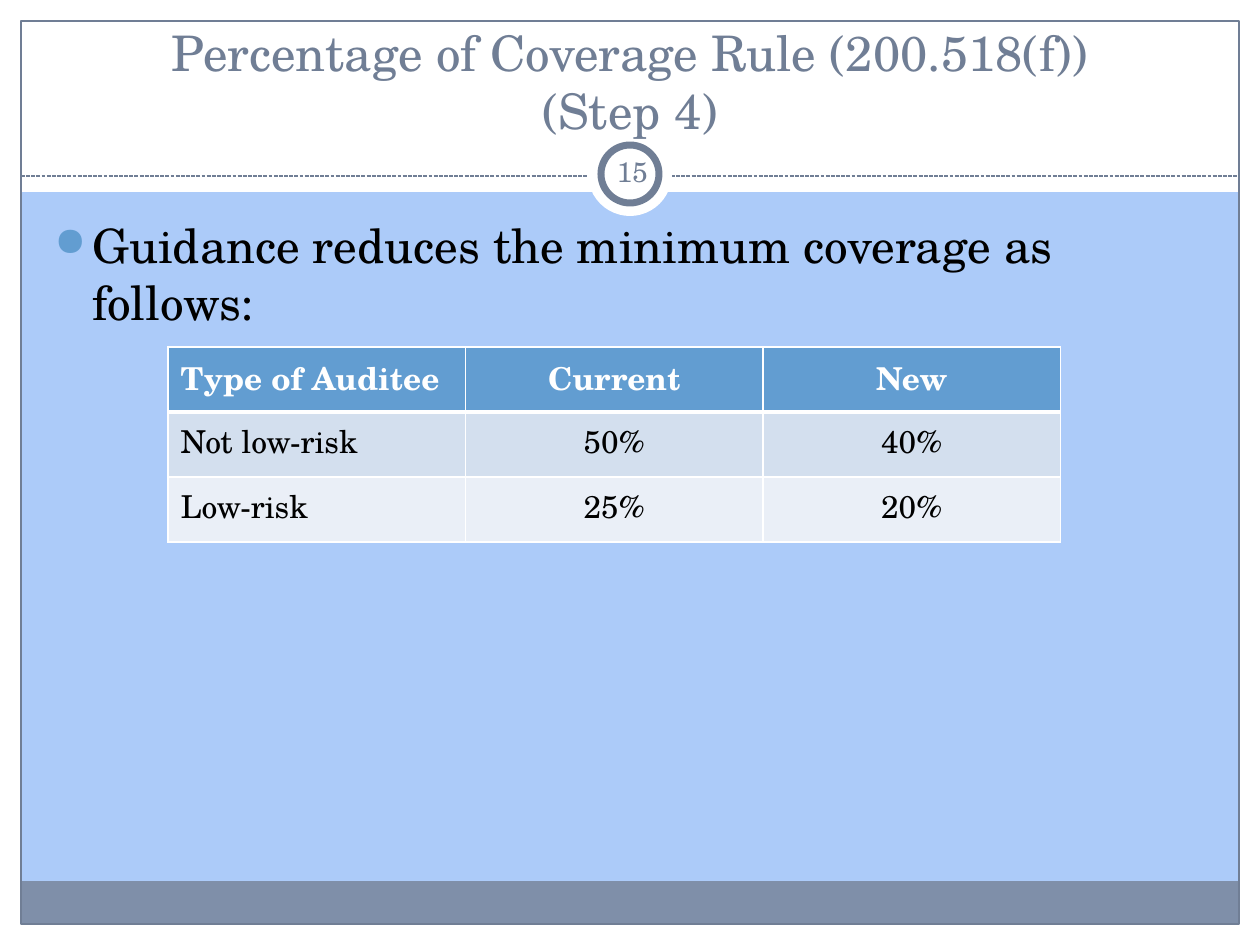
from lxml.etree import SubElement
from pptx import Presentation
from pptx.dml.color import RGBColor
from pptx.enum.dml import MSO_LINE_DASH_STYLE as Dash
from pptx.enum.shapes import MSO_CONNECTOR, MSO_SHAPE as Shape
from pptx.enum.text import MSO_ANCHOR as Anchor, PP_ALIGN as Align
from pptx.oxml.ns import qn
from pptx.util import Emu, Pt

SCALE = 914400 / 126  # EMU in one px
WIDTH, HEIGHT = 1260, 945
MARGIN = 21
FONT = "TeX Gyre Schola"
COLORS = {
    "background": "ACCBF9", "white": "FFFFFF", "black": "000000",
    "slate": "707E95", "footer": "7F8FA9", "accent": "629DD1",
    "band_dark": "D3DFEE", "band_light": "EAEFF7",
}
COVERAGE = [
    ("Type of Auditee", "Current", "New"),
    ("Not low-risk", "50%", "40%"),
    ("Low-risk", "25%", "20%"),
]


def px(length):
    return Emu(round(length * SCALE))


def rgb(name):
    return RGBColor.from_string(COLORS[name])


def set_attributes(target, values):
    for name, value in values.items():
        setattr(target, name, value)


def write(frame, text, size, color, align=Align.LEFT, bold=False):
    paragraph = frame.paragraphs[0]
    paragraph.text = text
    paragraph.alignment = align
    for run in paragraph.runs:
        set_attributes(run.font, {"name": FONT, "size": Pt(size), "bold": bold})
        run.font.color.rgb = rgb(color)
    return paragraph


def add_panel(slide, kind, box, fill=None, line_width=0):
    panel = slide.shapes.add_shape(kind, *map(px, box))
    panel.shadow.inherit = False
    if fill:
        panel.fill.solid()
        panel.fill.fore_color.rgb = rgb(fill)
    else:
        panel.fill.background()
    if line_width:
        panel.line.color.rgb = rgb("slate")
        panel.line.width = Pt(line_width)
    else:
        panel.line.fill.background()


def add_divider(slide, y):
    divider = slide.shapes.add_connector(
        MSO_CONNECTOR.STRAIGHT, px(MARGIN), px(y), px(WIDTH - MARGIN), px(y))
    set_attributes(divider.line, {"width": Pt(0.75), "dash_style": Dash.SQUARE_DOT})
    divider.line.color.rgb = rgb("slate")
    SubElement(divider._element.spPr, qn("a:effectLst"))


def add_frame(slide):
    inner = WIDTH - 2 * MARGIN
    # White margins and the header band
    for box in ((0, HEIGHT - MARGIN, WIDTH, MARGIN), (0, 0, WIDTH, 192),
                (0, 0, MARGIN, HEIGHT), (WIDTH - MARGIN, 0, MARGIN, HEIGHT)):
        add_panel(slide, Shape.RECTANGLE, box, "white")
    # Footer band and outline
    add_panel(slide, Shape.RECTANGLE, (MARGIN, 881, inner, 43), "footer")
    add_panel(slide, Shape.RECTANGLE, (MARGIN, MARGIN, inner, HEIGHT - 2 * MARGIN),
              line_width=0.75)
    # Divider and page badge
    add_divider(slide, 176)
    add_panel(slide, Shape.OVAL, (588, 132, 84, 84), "white")
    add_panel(slide, Shape.OVAL, (601, 145, 58, 58), "white", 4)


def add_title(slide, text):
    title = slide.shapes.title
    left, top, width, height = map(px, (42, 42, 1176, 104))
    set_attributes(title, {"left": left, "top": top, "width": width, "height": height})
    set_attributes(title.text_frame, {"vertical_anchor": Anchor.BOTTOM, "word_wrap": True})
    write(title.text_frame, text, 28, "slate", Align.CENTER)
    # Draw the title above the frame
    slide.shapes._spTree.append(title._element)


def add_text(slide, box, text, size, color, align=Align.LEFT, **frame_format):
    frame = slide.shapes.add_textbox(*map(px, box)).text_frame
    set_attributes(frame, {"word_wrap": True, **frame_format})
    return write(frame, text, size, color, align)


def add_bullet(paragraph):
    indent = px(38)
    properties = paragraph._p.get_or_add_pPr()
    properties.set("marL", str(indent))
    properties.set("indent", str(-indent))
    bullet_color = SubElement(properties, qn("a:buClr"))
    SubElement(bullet_color, qn("a:srgbClr"), val=COLORS["accent"])
    SubElement(properties, qn("a:buSzPct"), val="85000")
    SubElement(properties, qn("a:buChar"), char="●")


def set_borders(cell, bottom_width):
    properties = cell._tc.get_or_add_tcPr()
    widths = {"lnL": 1, "lnR": 1, "lnT": 1, "lnB": bottom_width}
    for position, (side, width) in enumerate(widths.items()):
        border = SubElement(properties, qn(f"a:{side}"), w=str(Pt(width)))
        fill = SubElement(border, qn("a:solidFill"))
        SubElement(fill, qn("a:srgbClr"), val=COLORS["white"])
        properties.insert(position, border)


def add_coverage_table(slide, rows):
    row_height, column_width = 65, 297.5
    box = (168, 347, column_width * len(rows[0]), row_height * len(rows))
    table = slide.shapes.add_table(len(rows), len(rows[0]), *map(px, box)).table
    fills = ("accent", "band_dark", "band_light")
    for r, row in enumerate(rows):
        header = r == 0
        for c, text in enumerate(row):
            cell = table.cell(r, c)
            cell.fill.solid()
            cell.fill.fore_color.rgb = rgb(fills[r])
            write(cell.text_frame, text, 18, "white" if header else "black",
                  Align.CENTER if c else Align.LEFT, header)
            set_borders(cell, 3 if header else 1)
            if r == 1:  # the thick header rule is shared with this row
                cell._tc.tcPr.find(qn("a:lnT")).set("w", str(Pt(3)))


def main():
    deck = Presentation()
    set_attributes(deck, {"slide_width": px(WIDTH), "slide_height": px(HEIGHT)})
    slide = deck.slides.add_slide(deck.slide_layouts[5])
    slide.background.fill.solid()
    slide.background.fill.fore_color.rgb = rgb("background")

    add_frame(slide)
    add_title(slide, "Percentage of Coverage Rule (200.518(f))\v(Step 4)")
    add_bullet(add_text(slide, (42, 210, 1172, 630),
                        "Guidance reduces the minimum coverage as follows:", 27, "black"))
    add_coverage_table(slide, COVERAGE)
    # Page number
    insets = {f"margin_{side}": px(6) for side in ("left", "top", "right", "bottom")}
    add_text(slide, (601, 141, 63, 60), "15", 16, "slate", Align.CENTER,
             vertical_anchor=Anchor.MIDDLE, **insets)
    deck.save("out.pptx")


if __name__ == "__main__":
    main()
